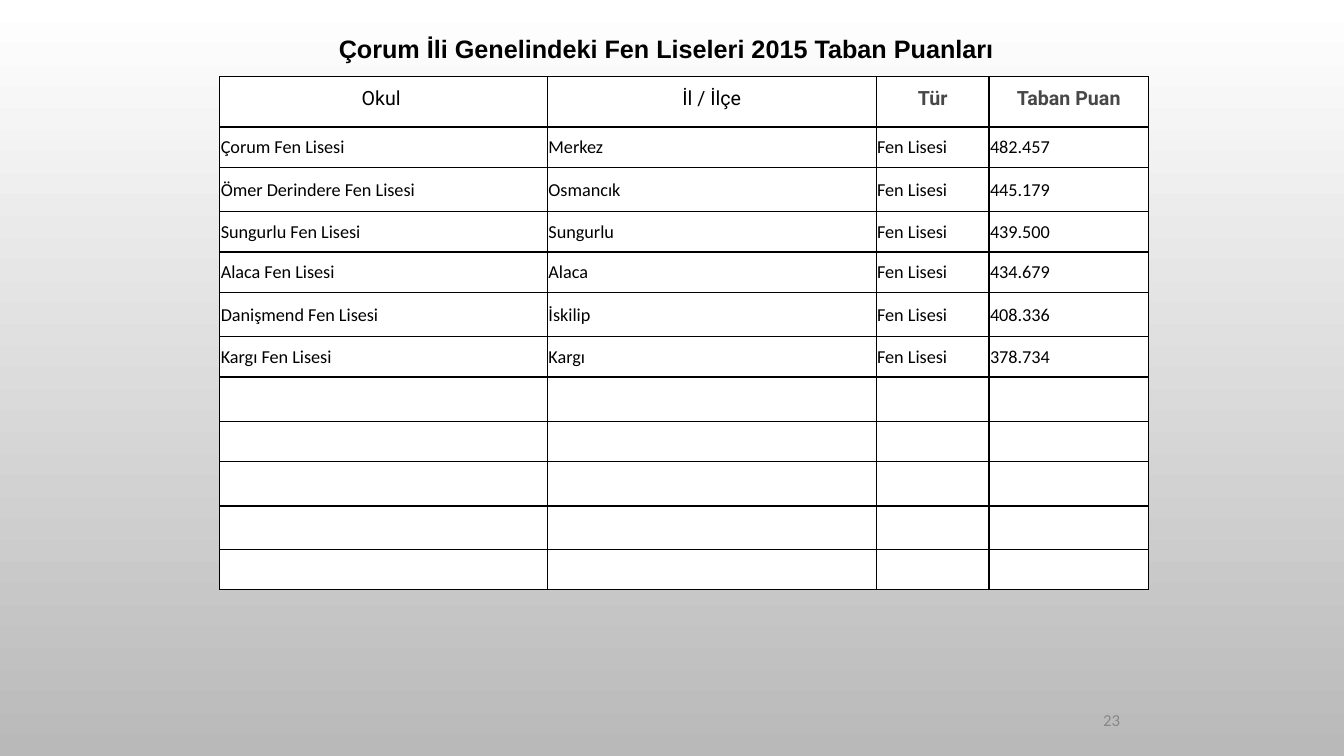
import pptx
import pptx.dml.color
import pptx.enum.text
import pptx.oxml
import pptx.oxml.ns
import pptx.util
from pptx.util import Inches

ALIGN = pptx.enum.text.PP_ALIGN
MIDDLE = pptx.enum.text.MSO_ANCHOR.MIDDLE


def color(value):
    return pptx.dml.color.RGBColor.from_string(value)


def add_run(para, text, font, size, value, bold=False):
    span = para.add_run()
    span.text = text
    span.font.name = font
    span.font.size = pptx.util.Pt(size)
    span.font.bold = bold
    span.font.color.rgb = color(value)


deck = pptx.Presentation()
deck.slide_width = Inches(13.33)
deck.slide_height = Inches(7.5)
page = deck.slides.add_slide(deck.slide_layouts[6])

backdrop = page.background.fill
backdrop.gradient()
backdrop.gradient_angle = 270
for stop, position, value in zip(backdrop.gradient_stops, (0, 1), ("FFFFFF", "B9B9B9")):
    stop.position = position
    stop.color.rgb = color(value)

left, top, right, bottom = Inches(8.83), Inches(7), Inches(11.16), Inches(7.29)
outline = page.shapes.build_freeform(left, top)
outline.add_line_segments([(right, top), (right, bottom), (left, bottom)], close=True)
number_box = outline.convert_to_shape()
number_box.shadow.inherit = False
number_box.fill.background()
number_box.line.fill.background()
frame = number_box.text_frame
frame.word_wrap = True
frame.vertical_anchor = MIDDLE
frame.margin_left = frame.margin_right = Inches(0.05)
frame.margin_top = frame.margin_bottom = Inches(0.05)
para = frame.paragraphs[0]
para.alignment = ALIGN.RIGHT
add_run(para, "23", "Calibri", 12, "888888")

headings = [
    ("Okul ", "000000", False),
    ("İl / İlçe", "000000", False),
    ("Tür", "484848", True),
    ("Taban Puan", "484848", True),
]
schools = [
    ("Çorum Fen Lisesi", "Merkez", "482.457"),
    ("Ömer Derindere Fen Lisesi", "Osmancık", "445.179"),
    ("Sungurlu Fen Lisesi", "Sungurlu", "439.500"),
    ("Alaca Fen Lisesi", "Alaca", "434.679"),
    ("Danişmend Fen Lisesi", "İskilip", "408.336"),
    ("Kargı Fen Lisesi", "Kargı", "378.734"),
]
column_widths = [3.25, 3.26, 1.12, 1.58]
row_heights = [0.5, 0.4, 0.44, 0.4, 0.4, 0.44, 0.4, 0.44, 0.4, 0.44, 0.43, 0.4]

table = page.shapes.add_table(
    len(row_heights), len(column_widths),
    Inches(2.18), Inches(0.76), Inches(9.21), Inches(5.1),
).table
table.first_row = False
table.horz_banding = False
for column, width in zip(table.columns, column_widths):
    column.width = Inches(width)
for row, height in zip(table.rows, row_heights):
    row.height = Inches(height)

for cell in table.iter_cells():
    properties = cell._tc.get_or_add_tcPr()
    for side in ("lnL", "lnR", "lnT", "lnB"):
        properties.append(pptx.oxml.parse_xml(
            f'<a:{side} {pptx.oxml.ns.nsdecls("a")} w="12700"><a:solidFill>'
            f'<a:srgbClr val="000000"/></a:solidFill></a:{side}>'
        ))
    cell.fill.solid()
    cell.fill.fore_color.rgb = color("FFFFFF")
    cell.vertical_anchor = MIDDLE
    cell.margin_left = cell.margin_right = cell.margin_top = Inches(0.01)
    cell.margin_bottom = 0

for index, (heading, value, bold) in enumerate(headings):
    cell = table.cell(0, index)
    cell.margin_left = cell.margin_right = Inches(0.06)
    cell.margin_top = cell.margin_bottom = Inches(0.06)
    para = cell.text_frame.paragraphs[0]
    para.alignment = ALIGN.CENTER
    para.line_spacing = pptx.util.Pt(12.8)
    para.space_after = pptx.util.Pt(10.1)
    add_run(para, heading, "Roboto", 14, value, bold)

for row_index, (school, district, score) in enumerate(schools, start=1):
    for index, text in enumerate((school, district, "Fen Lisesi", score)):
        para = table.cell(row_index, index).text_frame.paragraphs[0]
        add_run(para, text, "Calibri", 13, "000000")

title_box = page.shapes.add_textbox(Inches(2.57), Inches(0.28), Inches(7.46), Inches(0.4))
frame = title_box.text_frame
frame.word_wrap = True
frame.margin_left = Inches(0.79)
frame.margin_right = 0
add_run(frame.paragraphs[0], "Çorum İli Genelindeki Fen Liseleri 2015 Taban Puanları",
        "Arial", 18, "000000", True)

deck.save("out.pptx")
